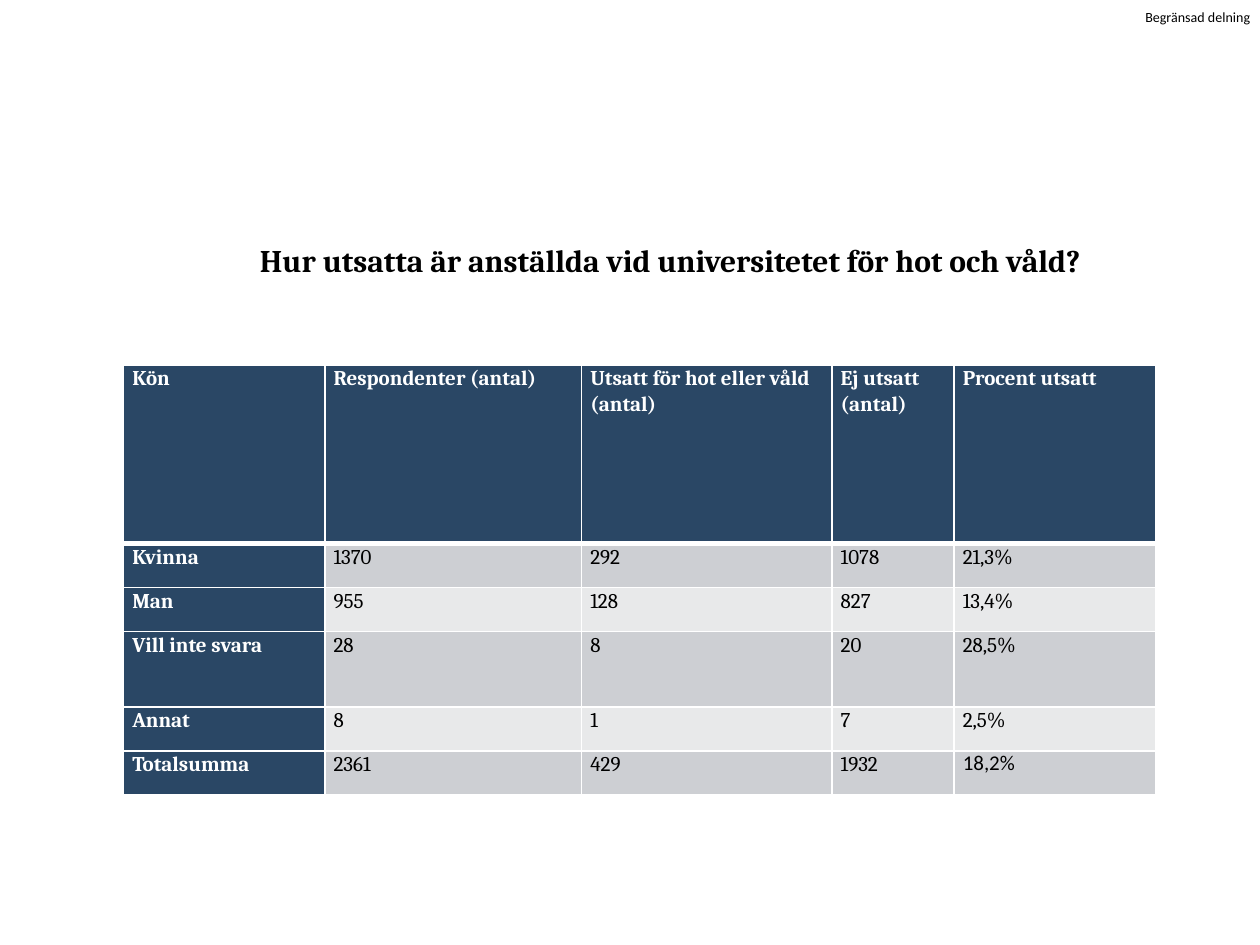
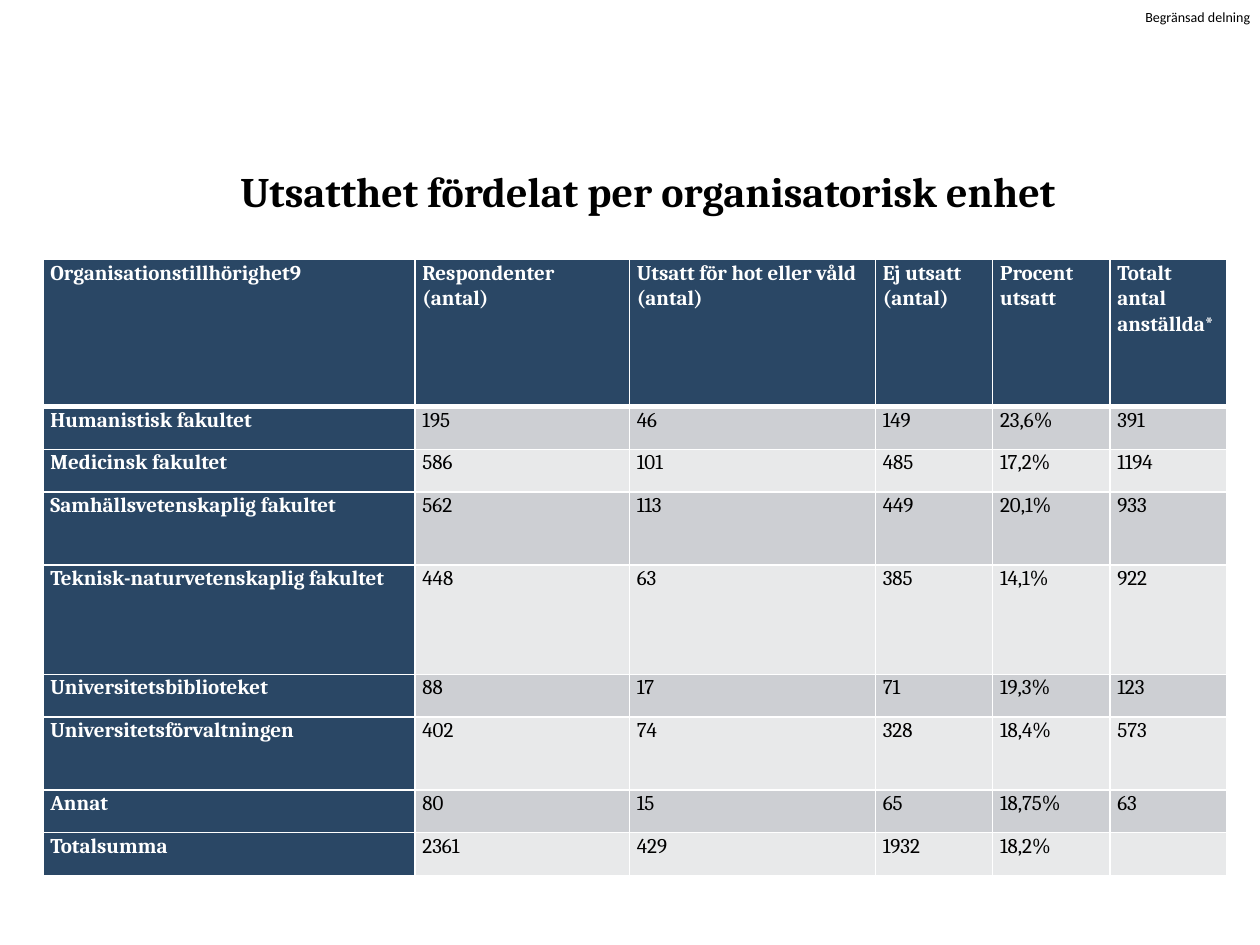
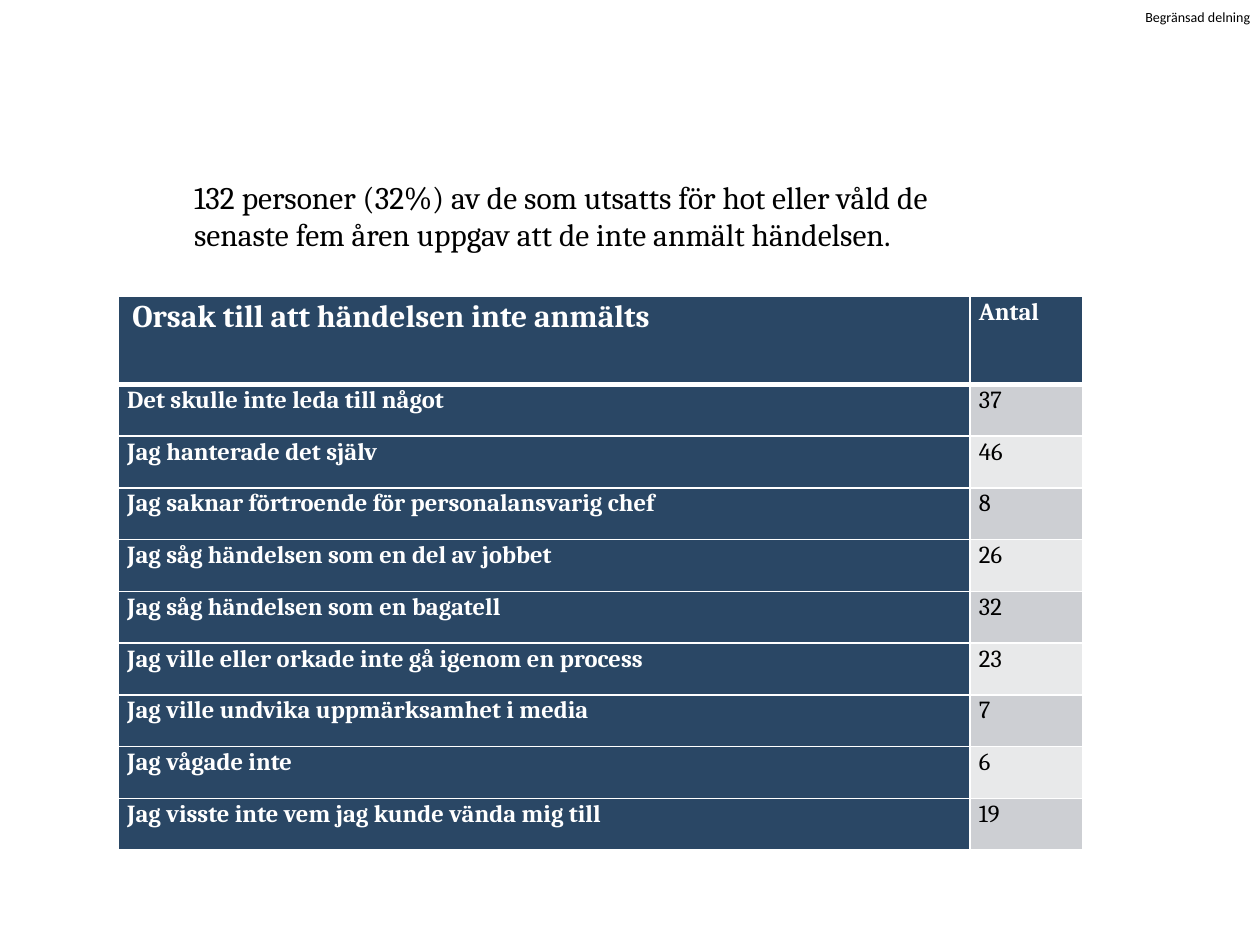
from pptx import Presentation
from pptx.dml.color import RGBColor
from pptx.enum.text import MSO_ANCHOR as Anchor, MSO_AUTO_SIZE as AutoSize, PP_ALIGN as Align
from pptx.oxml import parse_xml
from pptx.oxml.ns import nsdecls
from pptx.util import Inches, Pt

NAVY, DARK_BAND, LIGHT_BAND = "2A4765", "CDCFD3", "E8E9EA"
WHITE, BLACK = "FFFFFF", "000000"
SERIF, SANS = "Cambria", "Calibri"
WIDTH, HEIGHT = Inches(10), Inches(7.5)
COLUMN, ROW = WIDTH / 100, HEIGHT / 75
TITLE_ONLY = 5

GENDER_ROWS = [
    ["Kön", "Respondenter (antal)", "Utsatt för hot eller våld (antal)", "Ej utsatt (antal)",
     "Procent utsatt"],
    ["Kvinna", "1370", "292", "1078", "21,3%"],
    ["Man", "955", "128", "827", "13,4%"],
    ["Vill inte svara", "28", "8", "20", "28,5%"],
    ["Annat", "8", "1", "7", "2,5%"],
    ["Totalsumma", "2361", "429", "1932", "18,2%"],
]
UNIT_ROWS = [
    ["Organisationstillhörighet9", "Respondenter (antal)", "Utsatt för hot eller våld (antal)",
     "Ej utsatt (antal)", "Procent utsatt", "Totalt antal anställda*"],
    ["Humanistisk fakultet", "195", "46", "149", "23,6%", "391"],
    ["Medicinsk fakultet", "586", "101", "485", "17,2%", "1194"],
    ["Samhällsvetenskaplig fakultet", "562", "113", "449", "20,1%", "933"],
    ["Teknisk-naturvetenskaplig fakultet", "448", "63", "385", "14,1%", "922"],
    ["Universitetsbiblioteket", "88", "17", "71", "19,3%", "123"],
    ["Universitetsförvaltningen", "402", "74", "328", "18,4%", "573"],
    ["Annat", "80", "15", "65", "18,75%", "63"],
    ["Totalsumma", "2361", "429", "1932", "18,2%", ""],
]
REASON_ROWS = [
    ["Orsak till att händelsen inte anmälts", "Antal"],
    ["Det skulle inte leda till något", "37"],
    ["Jag hanterade det själv", "46"],
    ["Jag saknar förtroende för personalansvarig chef", "8"],
    ["Jag såg händelsen som en del av jobbet", "26"],
    ["Jag såg händelsen som en bagatell", "32"],
    ["Jag ville eller orkade inte gå igenom en process", "23"],
    ["Jag ville undvika uppmärksamhet i media", "7"],
    ["Jag vågade inte", "6"],
    ["Jag visste inte vem jag kunde vända mig till", "19"],
]


def rgb(value):
    """Return the colour for a hex string."""
    return RGBColor.from_string(value)


def grid_box(left, top, width, height):
    """Turn grid columns and rows into slide lengths."""
    return [round(length) for length in
            (left * COLUMN, top * ROW, width * COLUMN, height * ROW)]


def style(paragraph, size, color=BLACK, bold=False, face=SERIF):
    """Set the font of a whole paragraph."""
    font = paragraph.font
    font.size, font.name, font.bold = Pt(size), face, bold
    font.color.rgb = rgb(color)


def add_sharing_label(slide):
    """Write the sharing restriction in the top right corner."""
    frame = slide.shapes.add_textbox(*grid_box(90.9, 0.7, 8.6, 1.3)).text_frame
    frame.margin_left = frame.margin_right = frame.margin_top = frame.margin_bottom = 0
    frame.word_wrap = False
    frame.text = "Begränsad delning"
    style(frame.paragraphs[0], 8, face=SANS)


def add_slide(prs, heading, box, size, bold=True, align=Align.CENTER):
    """Add a slide with its label and its heading in the given box."""
    slide = prs.slides.add_slide(prs.slide_layouts[TITLE_ONLY])
    add_sharing_label(slide)
    title = slide.shapes.title
    title.left, title.top, title.width, title.height = grid_box(*box)
    frame = title.text_frame
    frame.text = heading
    frame.word_wrap = True
    frame.auto_size = AutoSize.SHAPE_TO_FIT_TEXT
    frame.vertical_anchor = Anchor.TOP
    frame.paragraphs[0].alignment = align
    style(frame.paragraphs[0], size, bold=bold)
    return slide


def set_borders(cell, bottom, top):
    """Draw white cell borders with the given bottom and top widths."""
    for side, width in (("L", 1), ("R", 1), ("T", top), ("B", bottom)):
        cell._tc.get_or_add_tcPr().append(parse_xml(
            f'<a:ln{side} {nsdecls("a")} w="{Pt(width)}"><a:solidFill>'
            f'<a:srgbClr val="{WHITE}"/></a:solidFill></a:ln{side}>'))


def fill_cell(cell, text, row, column, size, inset):
    """Colour one cell and write its text by its place in the table."""
    is_label = row == 0 or column == 0
    set_borders(cell, bottom=3 if row == 0 else 1, top=3 if row == 1 else 1)
    cell.fill.solid()
    cell.fill.fore_color.rgb = rgb(NAVY if is_label else DARK_BAND if row % 2 else LIGHT_BAND)
    cell.margin_left = cell.margin_right = Inches(inset)
    cell.margin_top = cell.margin_bottom = 0
    if text:
        cell.text = text
        paragraph = cell.text_frame.paragraphs[0]
        paragraph.line_spacing, paragraph.space_after = 1.07, Pt(8)
        style(paragraph, size, WHITE if is_label else BLACK, is_label)


def add_figures(slide, rows, box, column_shares, row_shares, size=12, inset=0.07):
    """Add a table whose columns and rows share out the given box."""
    left, top, width, height = grid_box(*box)
    table = slide.shapes.add_table(len(rows), len(rows[0]), left, top, width, height).table
    for column, share in zip(table.columns, column_shares):
        column.width = round(width * share / sum(column_shares))
    for row, share in zip(table.rows, row_shares):
        row.height = round(height * share / sum(row_shares))
    for r, texts in enumerate(rows):
        for c, text in enumerate(texts):
            fill_cell(table.cell(r, c), text, r, c, size, inset)
    return table


def build_gender_slide(prs):
    """Show exposure by gender."""
    slide = add_slide(prs, "Hur utsatta är anställda vid universitetet för hot och våld?",
                      (12.7, 18.6, 81, 4), 18)
    figures = add_figures(slide, GENDER_ROWS, (9.8, 29, 81.9, 34.1),
                          [160, 204, 199, 97, 160], [142, 35, 35, 60, 35, 35])
    total_share = figures.cell(5, 4).text_frame.paragraphs[0]
    total_share.line_spacing, total_share.space_after = 1.0, Pt(0)
    style(total_share, 12, face=SANS)


def build_unit_slide(prs):
    """Show exposure by organisational unit."""
    slide = add_slide(prs, "Utsatthet fördelat per organisatorisk enhet",
                      (11.9, 12.6, 79, 5), 24)
    add_figures(slide, UNIT_ROWS, (3.4, 20.6, 94, 48.9), [295, 170, 195, 93, 93, 93],
                [117, 34, 34, 58, 87, 34, 58, 34, 34], inset=0.06)


def build_reason_slide(prs):
    """Show why incidents were not reported."""
    slide = add_slide(prs, "132 personer (32%) av de som utsatts för hot eller våld de senaste "
                      "fem åren uppgav att de inte anmält händelsen.",
                      (14.4, 13.6, 66.4, 7.1), 18, bold=False, align=Align.LEFT)
    reasons = add_figures(slide, REASON_ROWS, (9.4, 23.5, 76.5, 44), [676, 89],
                          [70] + [41] * 9, size=14)
    reason_heading = reasons.cell(0, 0)
    reason_heading.margin_left = Inches(0.11)
    style(reason_heading.text_frame.paragraphs[0], 18, WHITE, True)


def main():
    """Build and save the three slides."""
    prs = Presentation()
    prs.slide_width, prs.slide_height = WIDTH, HEIGHT
    for build in (build_gender_slide, build_unit_slide, build_reason_slide):
        build(prs)
    prs.save("out.pptx")


if __name__ == "__main__":
    main()
